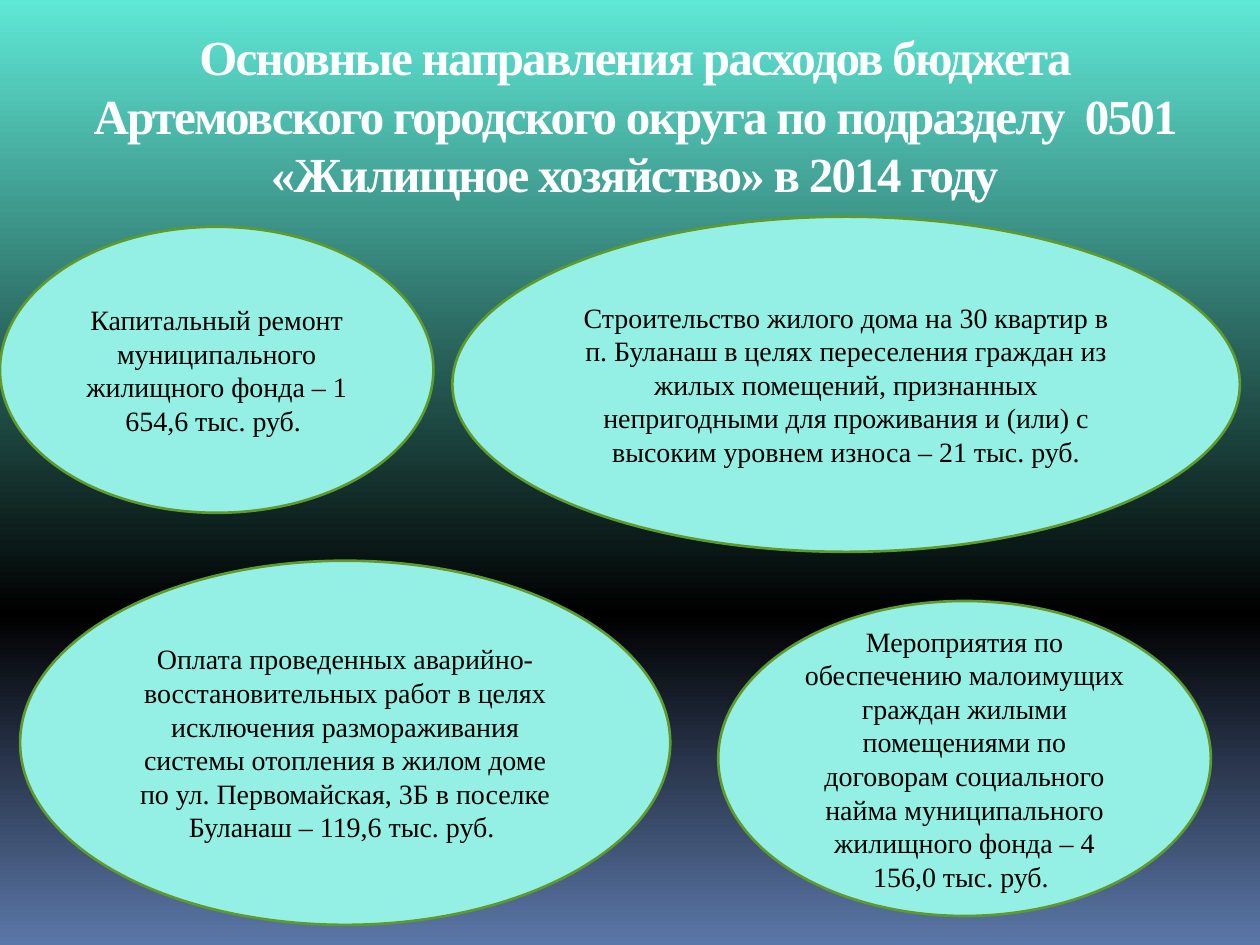
"""Build a slide on housing spending of the city district budget."""
import copy

import pptx
import pptx.dml.color
import pptx.enum.shapes
import pptx.enum.text
import pptx.oxml.ns
import pptx.util

Inches = pptx.util.Inches
RGBColor = pptx.dml.color.RGBColor

WHITE = RGBColor(0xFF, 0xFF, 0xFF)
BLACK = RGBColor(0, 0, 0)
MINT = RGBColor(0x94, 0xF0, 0xE4)
GREEN = RGBColor(0x5E, 0x9B, 0x2C)
AQUA = RGBColor(0x5F, 0xE8, 0xD6)
BLUE = RGBColor(0x5B, 0x77, 0xA8)

TITLE = ("Основные направления расходов бюджета Артемовского городского округа "
         "по подразделу  0501 «Жилищное хозяйство» в 2014 году")
ITEMS = [
    ((3.59, 1.72, 6.25, 2.66),
     "Строительство жилого дома на 30 квартир в п. Буланаш в целях переселения "
     "граждан из жилых помещений, признанных непригодными для проживания и (или) "
     "с высоким уровнем износа – 21 тыс. руб."),
    ((0, 1.8, 3.44, 2.27),
     "Капитальный ремонт муниципального жилищного фонда – 1 654,6 тыс. руб. "),
    ((5.7, 4.77, 3.91, 2.5),
     "Мероприятия по обеспечению малоимущих граждан жилыми помещениями по "
     "договорам социального найма муниципального жилищного фонда – "
     "4 156,0 тыс. руб. "),
    ((0.16, 4.45, 5.16, 2.89),
     "Оплата проведенных аварийно-восстановительных работ в целях исключения "
     "размораживания системы отопления в жилом доме по ул. Первомайская, 3Б "
     "в поселке Буланаш – 119,6 тыс. руб. "),
]


class Page:
    """Hold the text style and the current slide."""

    font = "Times New Roman"

    def __init__(self, slide):
        self.slide = slide

    def back(self, stops):
        """Fill the background with a gradient running downwards."""
        fill = self.slide.background.fill
        fill.gradient()
        fill.gradient_angle = 270
        tag = pptx.oxml.ns.qn("a:gsLst")
        group = next(self.slide.element.iter(tag))
        while len(group) < len(stops):
            group.append(copy.deepcopy(group[0]))
        for stop, (place, color) in zip(fill.gradient_stops, stops):
            stop.position = place
            stop.color.rgb = color

    def label(self, shape, text, size, color, bold=False):
        """Put one centred run into a shape and return it."""
        frame = shape.text_frame
        frame.word_wrap = True
        para = frame.paragraphs[0]
        para.alignment = pptx.enum.text.PP_ALIGN.CENTER
        run = para.add_run()
        run.text = text
        run.font.name = self.font
        run.font.size = pptx.util.Pt(size)
        run.font.bold = bold
        run.font.color.rgb = color
        return run

    def title(self, box, text):
        """Add the heading with tightened letters."""
        shape = self.slide.shapes.add_textbox(*map(Inches, box))
        run = self.label(shape, text, 28, WHITE, True)
        run.font._element.set("spc", "-100")

    def oval(self, box, text):
        """Add an ellipse with centred text."""
        kind = pptx.enum.shapes.MSO_SHAPE.OVAL
        shape = self.slide.shapes.add_shape(kind, *map(Inches, box))
        shape.shadow.inherit = False
        shape.fill.solid()
        shape.fill.fore_color.rgb = MINT
        shape.line.color.rgb = GREEN
        shape.line.width = pptx.util.Pt(1.5)
        shape.text_frame.vertical_anchor = pptx.enum.text.MSO_ANCHOR.MIDDLE
        self.label(shape, text, 16, BLACK)


def main():
    """Build and save the deck."""
    deck = pptx.Presentation()
    deck.slide_width = Inches(10)
    deck.slide_height = Inches(7.5)
    page = Page(deck.slides.add_slide(deck.slide_layouts[6]))
    page.back([(0, AQUA), (0.65, BLACK), (1, BLUE)])
    page.title((0.31, 0.16, 9.45, 1.4), TITLE)
    for box, text in ITEMS:
        page.oval(box, text)
    deck.save("out.pptx")


if __name__ == "__main__":
    main()
